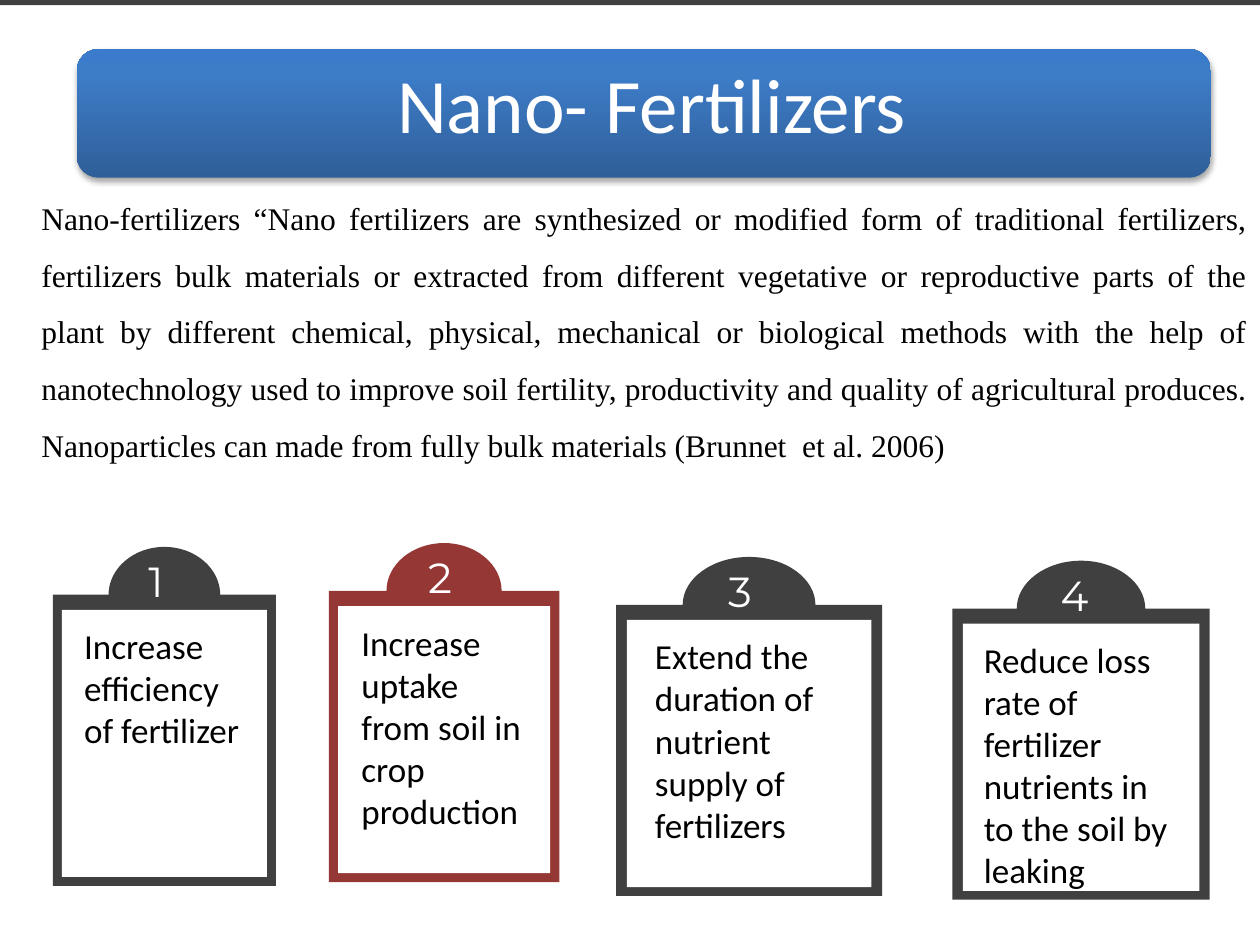
from copy import deepcopy
from dataclasses import dataclass

from lxml import etree
from pptx import Presentation
from pptx.dml.color import RGBColor
from pptx.enum import shapes, text
from pptx.oxml.ns import qn
from pptx.util import Inches, Pt


@dataclass(frozen=True)
class Theme:
    dark: str = "404040"
    red: str = "953735"
    white: str = "FFFFFF"
    black: str = "000000"
    banner: tuple = ((0, "2F5F99"), (0.8, "3D7CC7"), (1, "3A7CCB"))
    sans: str = "Calibri"
    serif: str = "Times New Roman"
    number_font: str = "Montserrat"
    title_size: int = 44
    number_size: int = 24
    card_size: int = 20
    body_size: int = 18


def bend(line, *points):
    """Turn a straight path segment into a Bezier curve through its points."""
    curve = etree.Element(qn("a:cubicBezTo"))
    for x, y in points:
        etree.SubElement(curve, qn("a:pt"), x=str(round(x)), y=str(round(y)))
    line.getparent().replace(line, curve)


class Deck:
    def __init__(self, slide, theme):
        self.slide = slide
        self.theme = theme

    def finish(self, sp, color):
        sp.shadow.inherit = False
        sp.line.fill.background()
        sp.fill.solid()
        sp.fill.fore_color.rgb = RGBColor.from_string(color)
        return sp

    def box(self, left, top, width, height, color, kind=shapes.MSO_SHAPE.RECTANGLE):
        sp = self.slide.shapes.add_shape(
            kind, Inches(left), Inches(top), Inches(width), Inches(height))
        return self.finish(sp, color)

    def label(self, left, top, width, height, words, font, size, color,
              wrap=True, align=text.PP_ALIGN.LEFT, spacing=1.0):
        sp = self.slide.shapes.add_textbox(
            Inches(left), Inches(top), Inches(width), Inches(height))
        tf = sp.text_frame
        tf.word_wrap = wrap
        tf.auto_size = text.MSO_AUTO_SIZE.SHAPE_TO_FIT_TEXT
        tf.text = words
        p = tf.paragraphs[0]
        p.alignment = align
        p.line_spacing = spacing
        r = p.runs[0]
        r.font.name = font
        r.font.size = Pt(size)
        r.font.color.rgb = RGBColor.from_string(color)
        return tf

    def tabbed_frame(self, left, top, width, height, color):
        """Rectangle with a half ellipse, half as wide, on its top edge."""
        units = 1000  # path units in an inch
        right, bottom, tab = width * units, height * units, 0.38 * units
        middle, radius = right / 2, right / 4
        apex = (middle, 0)
        tab_left, tab_right = (middle - radius, tab), (middle + radius, tab)

        builder = self.slide.shapes.build_freeform(*apex, scale=Inches(1) / units)
        builder.add_line_segments(
            [tab_right, (right, tab), (right, bottom), (0, bottom), (0, tab),
             tab_left, apex], close=True)
        sp = builder.convert_to_shape(Inches(left), Inches(top))

        lines = sp._element.spPr.findall(".//" + qn("a:lnTo"))
        reach, rise = 0.55 * radius, 0.45 * tab
        bend(lines[0], (middle + reach, 0), (tab_right[0], rise), tab_right)
        bend(lines[-1], (tab_left[0], rise), (middle - reach, 0), apex)
        return self.finish(sp, color)

    def card(self, number, words, left, top, width, color, number_left,
             text_left, text_width, text_height):
        t = self.theme
        self.tabbed_frame(left, top, width, 2.69, color)
        margin = width * 0.04
        self.box(left + margin, top + 0.5, width - 2 * margin, 2.12, t.white)
        self.label(number_left, top + 0.02, 0.43, 0.5, str(number),
                   t.number_font, t.number_size, t.white, wrap=False)
        self.label(text_left, top + 0.57, text_width, text_height, words,
                   t.sans, t.card_size, t.black)

    def banner(self, words):
        t = self.theme
        sp = self.box(0.61, 0.39, 9, 1.02, t.dark, shapes.MSO_SHAPE.ROUNDED_RECTANGLE)
        sp.fill.gradient()
        sp.fill.gradient_angle = 90
        stop_list = sp._element.spPr.find(".//" + qn("a:gsLst"))
        stop_list.append(deepcopy(stop_list[-1]))
        for stop, (position, color) in zip(sp.fill.gradient_stops, t.banner):
            stop.position = position
            stop.color.rgb = RGBColor.from_string(color)
        self.drop_shadow(sp)

        tf = self.label(0.66, 0.44, 8.89, 0.84, words, t.sans, t.title_size,
                        t.white, align=text.PP_ALIGN.CENTER, spacing=0.9)
        tf.auto_size = text.MSO_AUTO_SIZE.NONE
        tf.vertical_anchor = text.MSO_ANCHOR.MIDDLE
        tf.margin_left = tf.margin_right = Inches(0.18)
        tf.margin_top = tf.margin_bottom = Inches(0.18)

    def drop_shadow(self, sp):
        effects = sp._element.spPr.find(qn("a:effectLst"))
        shadow = etree.SubElement(
            effects, qn("a:outerShdw"), blurRad=str(Pt(3.1)), dist=str(Pt(1.8)),
            dir="5400000", rotWithShape="0")
        color = etree.SubElement(shadow, qn("a:srgbClr"), val=self.theme.black)
        etree.SubElement(color, qn("a:alpha"), val="35000")


DEFINITION = (
    "Nano-fertilizers “Nano fertilizers are synthesized or modified form of "
    "traditional fertilizers, fertilizers bulk materials or extracted from "
    "different vegetative or reproductive parts of the plant by different "
    "chemical, physical, mechanical or biological methods with the help of "
    "nanotechnology used to improve soil fertility, productivity and quality of "
    "agricultural produces. Nanoparticles can made from fully bulk materials "
    "(Brunnet  et al. 2006)")


def main():
    prs = Presentation()
    prs.slide_width, prs.slide_height = Inches(10), Inches(7.5)
    theme = Theme()
    deck = Deck(prs.slides.add_slide(prs.slide_layouts[6]), theme)

    # words, left, top, width, colour, number left, text left, text width, text height
    benefits = [
        ("Increase  efficiency of fertilizer",
         0.42, 4.34, 1.77, theme.dark, 1.08, 0.57, 1.47, 1.11),
        ("Increase uptake from soil in crop  production",
         2.61, 4.31, 1.83, theme.red, 3.3, 2.77, 1.53, 1.78),
        ("Extend the duration of nutrient supply of fertilizers",
         4.89, 4.42, 2.11, theme.dark, 5.68, 5.1, 1.76, 1.78),
        ("Reduce loss rate of fertilizer nutrients in to the soil by leaking",
         7.56, 4.45, 2.04, theme.dark, 8.32, 7.71, 1.7, 2.46),
    ]
    for number, benefit in enumerate(benefits, start=1):
        deck.card(number, *benefit)

    deck.box(0, -0.01, 10, 0.05, theme.dark)
    deck.banner(" Nano- Fertilizers")
    deck.label(0.23, 1.38, 9.77, 2.37, DEFINITION, theme.serif, theme.body_size,
               theme.black, align=text.PP_ALIGN.JUSTIFY, spacing=1.5)
    prs.save("out.pptx")


if __name__ == "__main__":
    main()
